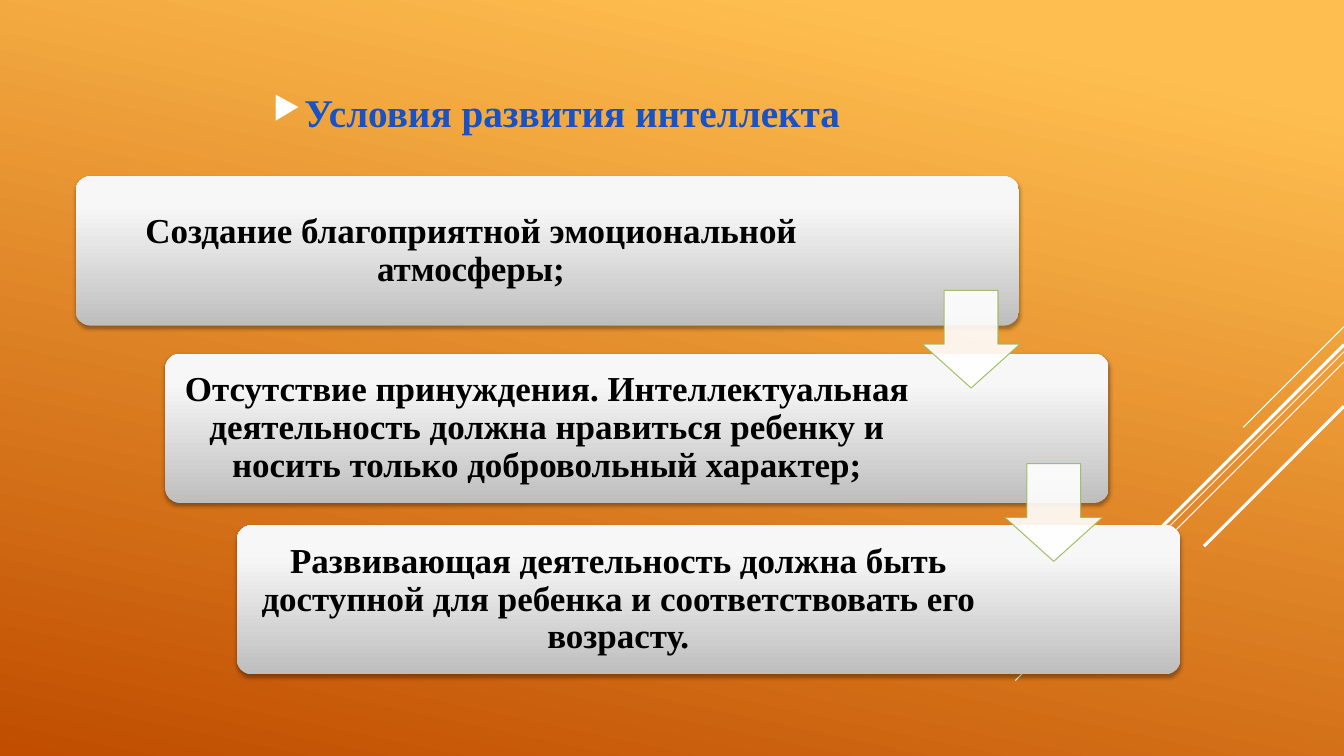
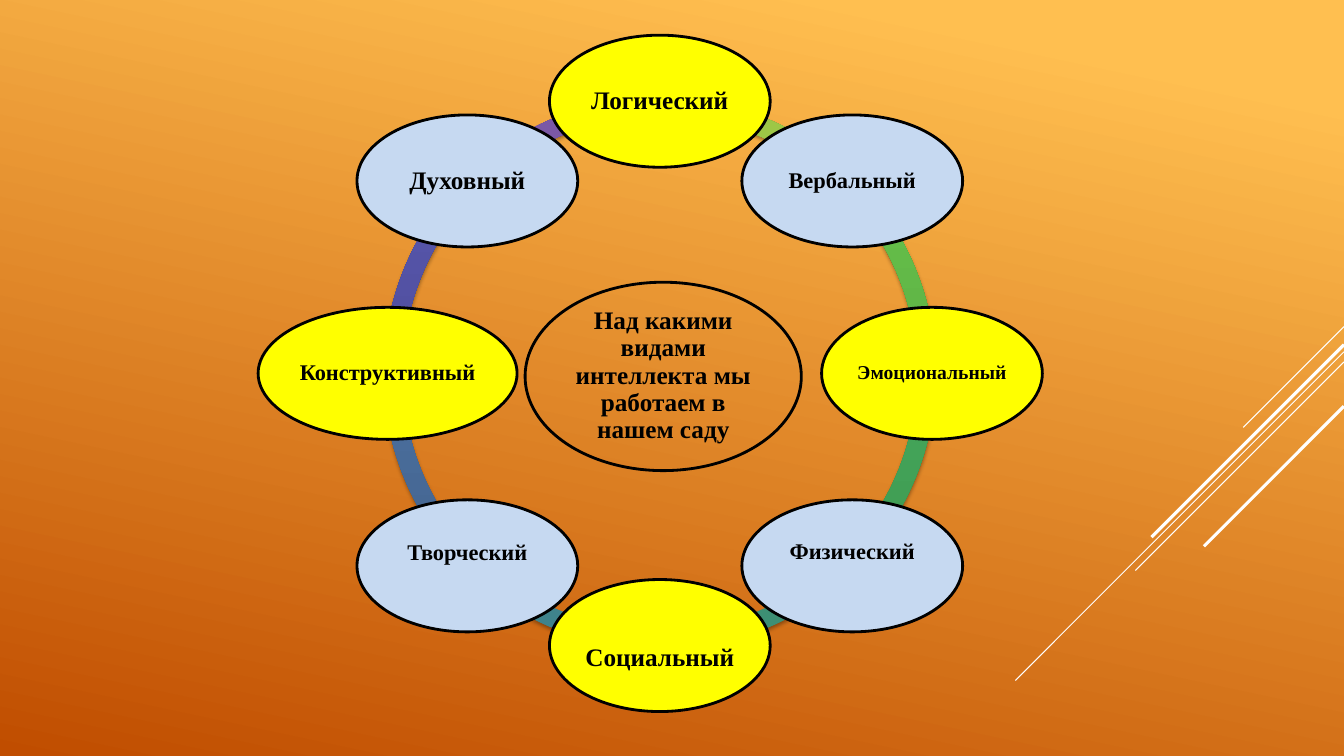
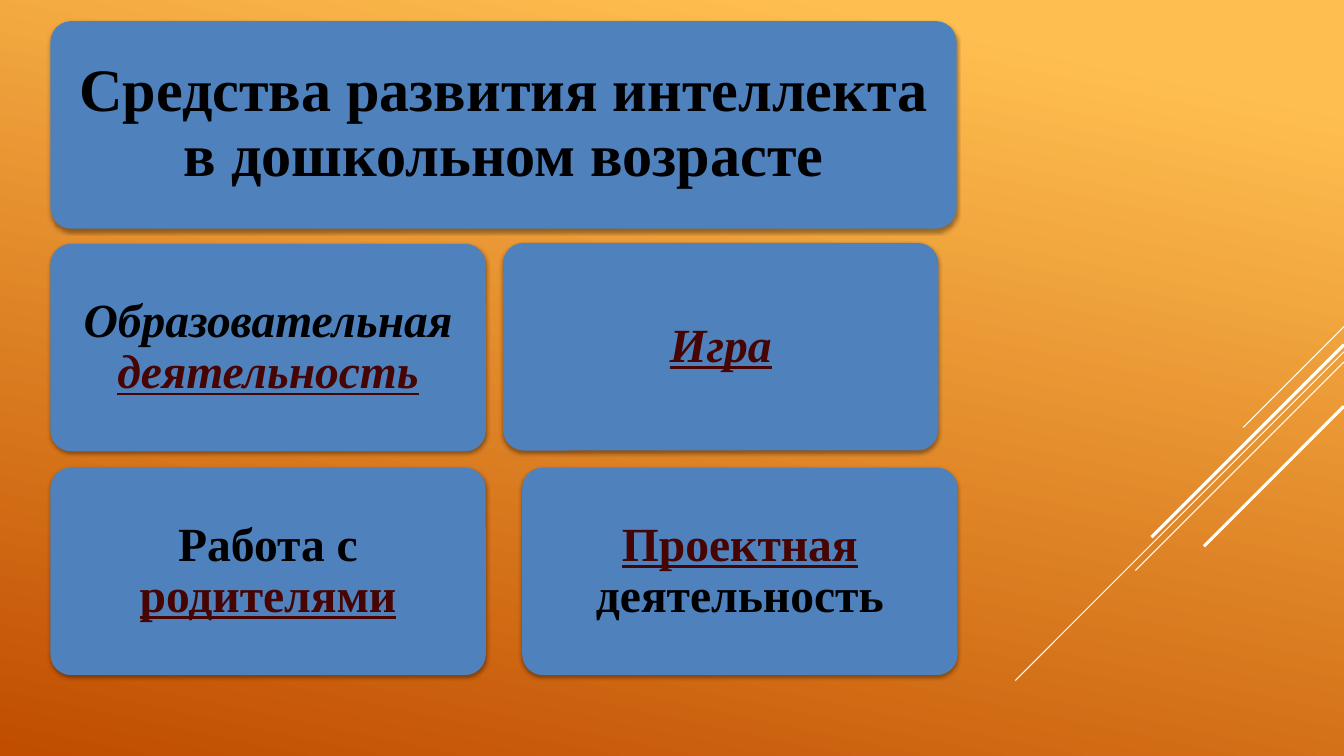
import math
from dataclasses import dataclass

from pptx import Presentation
from pptx.dml.color import RGBColor
from pptx.enum.shapes import MSO_CONNECTOR, MSO_SHAPE
from pptx.enum.text import MSO_ANCHOR, MSO_AUTO_SIZE, PP_ALIGN
from pptx.oxml.ns import qn
from pptx.util import Pt
from lxml import etree

STRAIGHT = MSO_CONNECTOR.STRAIGHT
ROUND_RECT = MSO_SHAPE.ROUNDED_RECTANGLE
ELLIPSE = MSO_SHAPE.OVAL
BLOCK_ARC = MSO_SHAPE.BLOCK_ARC
DOWN_ARROW = MSO_SHAPE.DOWN_ARROW
CENTER = PP_ALIGN.CENTER
MIDDLE = MSO_ANCHOR.MIDDLE
NO_AUTOFIT = MSO_AUTO_SIZE.NONE

FONT = "Times New Roman"
SLIDE_W, SLIDE_H = 960, 540
TITLE_ONLY = 5
COLORS = {
    "white": "FFFFFF",
    "black": "000000",
    "bg_light": "FFBF50",
    "bg_dark": "C04D00",
    "heading": "1752C7",
    "accent": "460402",
    "arrow_line": "9BBB59",
    "tile": "4F81BD",
    "yellow": "FFFF00",
    "pale": "C6D9F1",
    "step_dark": "BEBEBE",
    "step_mid": "F7F7F7",
    "step_light": "F8F8F8",
}


@dataclass
class Streak:
    """A 45 degree line running down and left from the right slide edge."""
    top: float
    reach: float
    weight: float


@dataclass
class Step:
    text: str
    left: float
    top: float
    right_inset: float


@dataclass
class Kind:
    text: str
    size: float
    width: float = 157.7
    shift: float = 0


@dataclass
class Tile:
    left: float
    top: float
    runs: list
    italic: bool = False


STREAKS = [
    Streak(233.3, 72, 0.75),
    Streak(251.3, 234.7, 0.75),
    Streak(258.5, 149, 0.75),
    Streak(246.2, 137.5, 2.25),
    Streak(290.2, 100, 2.25),
]
STEPS = [
    Step("Создание благоприятной эмоциональной атмосферы;", 54, 126, 119),
    Step("Отсутствие принуждения. Интеллектуальная деятельность должна "
         "нравиться ребенку и носить только добровольный характер;", 118.1, 252.7, 139),
    Step("Развивающая деятельность должна быть доступной для ребенка "
         "и соответствовать его возрасту.", 169.2, 375.1, 139),
]
ARROWS = [(658.8, 207.4), (717.8, 331.2)]
# Clockwise from the top
KINDS = [
    Kind("Логический", 18),
    Kind("Вербальный", 16),
    Kind("Эмоциональный", 14),
    Kind("Физический", 16, shift=-10),
    Kind("Социальный", 18, shift=9),
    Kind("Творческий", 16, shift=-9),
    Kind("Конструктивный", 16, width=185),
    Kind("Духовный", 18),
]
# Clockwise from the right; each arc shades from bottom to top
ARC_SHADES = [
    ("3B904D", "4CBB65", "4ABE64"),
    ("3C8D72", "4EB794", "4DBA96"),
    ("3E818A", "51A8B3", "4FAAB6"),
    ("405F87", "537BAF", "527CB1"),
    ("424283", "5655AA", "5554AD"),
    ("5F4480", "7B58A6", "7C57A8"),
    ("779737", "9BC348", "9DC746"),
    ("4E9339", "65BF4A", "64C348"),
]
# Each run is a text and whether it is accented
TILES = [
    Tile(36, 174.2, [("Образовательная ", False), ("деятельность", True)], True),
    Tile(36, 334, [("Работа с ", False), ("родителями", True)]),
    Tile(359.3, 173.5, [("Игра", True)], True),
    Tile(373, 334, [("Проектная", True), (" деятельность", False)]),
]


def rgb(color: str) -> RGBColor:
    return RGBColor.from_string(COLORS.get(color, color))


def sub(parent, tag: str, **attrs):
    return etree.SubElement(parent, qn(tag), {k: str(v) for k, v in attrs.items()})


def fill_gradient(fill, element, stops: list, angle: float) -> None:
    """Fill with (percent, colour) stops; the angle runs anticlockwise."""
    fill.gradient()
    fill.gradient_angle = angle
    gs_lst = element.find(".//" + qn("a:gsLst"))
    gs_lst.clear()
    for percent, color in stops:
        gs = sub(gs_lst, "a:gs", pos=percent * 1000)
        sub(gs, "a:srgbClr", val=COLORS.get(color, color))


def fill_shaded(sp, dark: str, mid: str, light: str) -> None:
    fill_gradient(sp.fill, sp.element, [(0, dark), (80, mid), (100, light)], 90)


def add_shadow(sp, dist: float, alpha: int) -> None:
    effects = sp.element.spPr.find(qn("a:effectLst"))
    shadow = sub(effects, "a:outerShdw", blurRad=int(Pt(3.1)), dist=int(Pt(dist)),
                 dir=90 * 60000, algn="ctr", rotWithShape=0)
    color = sub(shadow, "a:srgbClr", val=COLORS["black"])
    sub(color, "a:alpha", val=alpha * 1000)


def add_shape(s, kind, left: float, top: float, width: float, height: float, *,
              fill: str = "", line: str = "", weight: float = 2, adj: tuple = ()):
    sp = s.shapes.add_shape(kind, Pt(left), Pt(top), Pt(width), Pt(height))
    sp.shadow.inherit = False
    for i, value in enumerate(adj):
        sp.adjustments[i] = value
    if fill:
        sp.fill.solid()
        sp.fill.fore_color.rgb = rgb(fill)
    else:
        sp.fill.background()
    if line:
        sp.line.color.rgb = rgb(line)
        sp.line.width = Pt(weight)
    else:
        sp.line.fill.background()
    return sp


def set_text(sp, runs, *, size: float, color: str = "black", italic: bool = False,
             spacing: float = 0.9, insets: tuple = (0, 0, 0, 0)):
    """Write one centred bold paragraph; insets go left, top, right, bottom."""
    tf = sp.text_frame
    tf.word_wrap = True
    tf.auto_size = NO_AUTOFIT
    tf.vertical_anchor = MIDDLE
    tf.margin_left, tf.margin_top, tf.margin_right, tf.margin_bottom = map(Pt, insets)
    p = tf.paragraphs[0]
    p.alignment = CENTER
    p.line_spacing = spacing
    for text, accented in [(runs, False)] if isinstance(runs, str) else runs:
        r = p.add_run()
        r.text = text
        r.font.name = FONT
        r.font.size = Pt(size)
        r.font.bold = True
        r.font.italic = italic
        r.font.underline = accented
        r.font.color.rgb = rgb("accent" if accented else color)
    return p


def set_title(s, text: str, left: float, top: float, width: float, height: float, **fmt):
    """Place the title above the shapes drawn so far."""
    title = s.shapes.title
    title.left, title.top, title.width, title.height = map(Pt, (left, top, width, height))
    title.element.getparent().append(title.element)
    return set_text(title, text, **fmt)


def new_slide(prs):
    s = prs.slides.add_slide(prs.slide_layouts[TITLE_ONLY])
    for streak in STREAKS:
        line = s.shapes.add_connector(
            STRAIGHT, Pt(SLIDE_W), Pt(streak.top),
            Pt(SLIDE_W - streak.reach), Pt(streak.top + streak.reach))
        line.line.color.rgb = rgb("white")
        line.line.width = Pt(streak.weight)
        sub(line.element.spPr, "a:effectLst")
    return s


def conditions_slide(prs) -> None:
    s = new_slide(prs)
    p = set_title(s, "Условия развития интеллекта", 123.1, 54, 548.6, 51.8,
                  size=28, color="heading", spacing=1, insets=(7.2, 3.6, 7.2, 3.6))
    pPr = p._p.get_or_add_pPr()
    pPr.set("marL", str(Pt(22.5)))
    pPr.set("indent", str(Pt(-22.5)))
    sub(sub(pPr, "a:buClr"), "a:srgbClr", val=COLORS["white"])
    sub(pPr, "a:buSzPct", val=80000)
    sub(pPr, "a:buChar", char="▶")

    for step in STEPS:
        sp = add_shape(s, ROUND_RECT, step.left, step.top, 673.9, 106.6, adj=(0.1,))
        fill_shaded(sp, "step_dark", "step_mid", "step_light")
        add_shadow(sp, 1.8, 35)
        set_text(sp, step.text, size=25, insets=(10, 10, step.right_inset, 10))
    for left, top in ARROWS:
        sp = add_shape(s, DOWN_ARROW, left, top, 69.8, 69.8, fill="white",
                       line="arrow_line", weight=0.75, adj=(0.55, 0.45))
        for color in sp.element.spPr.iter(qn("a:srgbClr")):
            sub(color, "a:alpha", val=90000)


def kinds_slide(prs) -> None:
    s = new_slide(prs)
    cx, cy, radius = 471.3, 266.7, 194.4
    ring, oval_h = 394.6, 94.3
    sweep = 27  # an eighth of a turn in adjustment units
    for i, shades in enumerate(ARC_SHADES):
        end = min((i + 1) * sweep, 215.99)
        sp = add_shape(s, BLOCK_ARC, cx - ring / 2, cy - ring / 2, ring, ring,
                       adj=(i * sweep, end, 0.034))
        fill_shaded(sp, *shades)
        add_shadow(sp, 1.8, 35)

    add_shape(s, ELLIPSE, 375.1, 201.6, 197.3, 134.6, line="black")
    set_title(s, "Над какими видами интеллекта мы работаем в нашем саду",
              403.9, 221, 139.7, 95, size=18, insets=(2, 2, 2, 2))

    for i, kind in enumerate(KINDS):
        angle = math.tau * i / len(KINDS)
        x = cx + radius * math.sin(angle)
        y = cy - radius * math.cos(angle)
        sp = add_shape(s, ELLIPSE, x - kind.width / 2, y - oval_h / 2, kind.width, oval_h,
                       fill="pale" if i % 2 else "yellow", line="black")
        set_text(sp, kind.text, size=kind.size,
                 insets=(1, max(2 * kind.shift, 0), 1, max(-2 * kind.shift, 0)))


def means_slide(prs) -> None:
    s = new_slide(prs)
    tile_h = 148.3

    def add_tile(left: float, top: float, width: float):
        sp = add_shape(s, ROUND_RECT, left, top, width, tile_h, fill="tile", adj=(0.1,))
        add_shadow(sp, 1.6, 38)
        return sp

    heading = (36, 15.1, 647.3)
    add_tile(*heading)
    set_title(s, "Средства развития интеллекта в дошкольном возрасте",
              *heading, tile_h, size=43, insets=(17,) * 4)
    for tile in TILES:
        set_text(add_tile(tile.left, tile.top, 311), tile.runs, size=34,
                 italic=tile.italic, insets=(14,) * 4)


def main() -> None:
    prs = Presentation()
    prs.slide_width, prs.slide_height = Pt(SLIDE_W), Pt(SLIDE_H)
    master = prs.slide_master
    fill_gradient(master.background.fill, master.element,
                  [(10, "bg_light"), (100, "bg_dark")], 258)
    conditions_slide(prs)
    kinds_slide(prs)
    means_slide(prs)
    prs.save("out.pptx")


if __name__ == "__main__":
    main()
